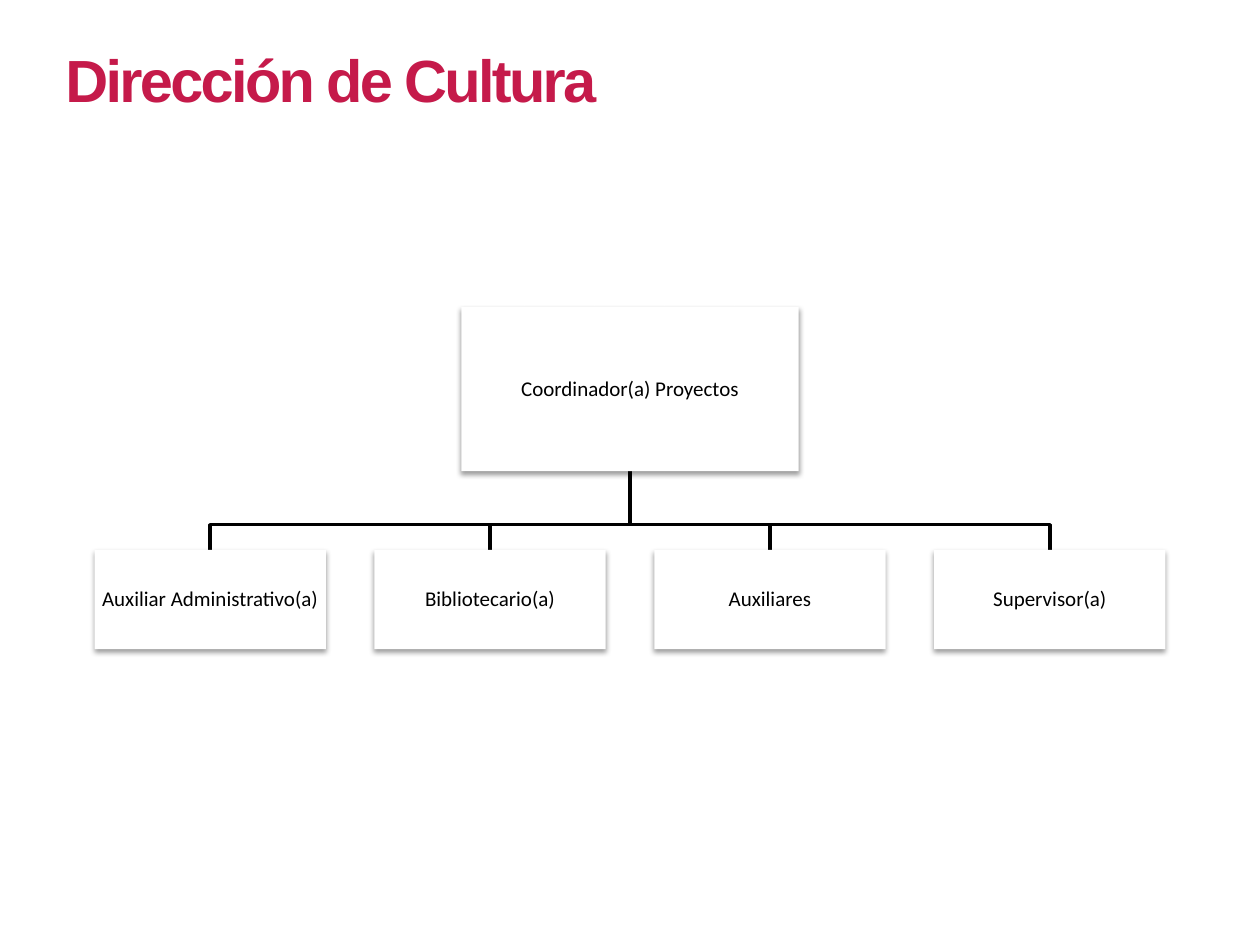
from lxml.etree import SubElement
from pptx import Presentation
from pptx.dml.color import RGBColor
from pptx.enum.shapes import MSO_SHAPE as Shape
from pptx.enum.text import MSO_ANCHOR as Anchor, MSO_AUTO_SIZE as AutoSize, PP_ALIGN as Align
from pptx.oxml.ns import qn
from pptx.util import Inches, Pt

COLORS = {"title": "C51A4A", "text": "000000", "line": "000000",
          "card": "FFFFFF", "shadow": "000000"}
WIDTH, HEIGHT = Inches(10), Inches(7.5)
LEAD = "Coordinador(a) Proyectos"
TEAM = ["Auxiliar Administrativo(a)", "Bibliotecario(a)", "Auxiliares", "Supervisor(a)"]


def color(name):
    """Return the named palette colour."""
    return RGBColor.from_string(COLORS[name])


def region(left, top, width, height):
    """Turn shares of the slide into a box of lengths."""
    return (round(left * WIDTH), round(top * HEIGHT),
            round(width * WIDTH), round(height * HEIGHT))


def write(frame, text, *, font, size, ink, bold=False, align=Align.LEFT,
          anchor=Anchor.TOP, inset=None, spacing=None, after=None, tracking=None):
    """Write one formatted paragraph into a text frame."""
    frame.word_wrap = True
    frame.vertical_anchor = anchor
    if inset is not None:
        frame.margin_left = frame.margin_right = inset
        frame.margin_top = frame.margin_bottom = inset
    paragraph = frame.paragraphs[0]
    paragraph.alignment = align
    paragraph.line_spacing = spacing
    paragraph.space_after = after
    run = paragraph.add_run()
    run.text = text
    run.font.name, run.font.size, run.font.bold = font, Pt(size), bold
    run.font.color.rgb = color(ink)
    if tracking is not None:
        run._r.get_or_add_rPr().set("spc", str(round(tracking * 100)))


def add_shadow(shape):
    """Give a shape a soft shadow straight below it."""
    shape.shadow.inherit = False
    effects = shape._element.spPr.find(qn("a:effectLst"))
    outer = SubElement(effects, qn("a:outerShdw"), blurRad=str(Pt(3.1)),
                       dist=str(Pt(1.6)), dir="5400000", rotWithShape="0")
    tint = SubElement(outer, qn("a:srgbClr"), val=COLORS["shadow"])
    SubElement(tint, qn("a:alpha"), val="38000")


def add_card(slide, box, role):
    """Place a white card that holds a role."""
    card = slide.shapes.add_shape(Shape.RECTANGLE, *box)
    card.fill.solid()
    card.fill.fore_color.rgb = color("card")
    card.line.fill.background()
    add_shadow(card)
    write(card.text_frame, role, font="Calibri", size=12, ink="text",
          align=Align.CENTER, anchor=Anchor.MIDDLE, inset=Inches(0.01),
          spacing=0.9, after=Pt(4.2))


def add_branch(slide, start, bend, end):
    """Draw a stepped line from the lead down to a team member."""
    builder = slide.shapes.build_freeform(*start)
    builder.add_line_segments([(start[0], bend), (end[0], bend), end], close=False)
    branch = builder.convert_to_shape()
    branch.fill.background()
    branch.line.color.rgb = color("line")
    branch.line.width = Pt(2)
    branch.shadow.inherit = False


def add_title(slide, box, text):
    """Place the slide title."""
    frame = slide.shapes.add_textbox(*box).text_frame
    write(frame, text, font="Arial", size=34, ink="title", bold=True, tracking=-1.5)
    frame.auto_size = AutoSize.SHAPE_TO_FIT_TEXT


def add_chart_tree(slide, box, lead, team):
    """Place the lead above an evenly spaced row of team members."""
    left, top, width, height = box
    lead_width, lead_height = round(width * 0.315), round(height * 0.48)
    card_width, card_height = round(width * 0.216), round(height * 0.29)
    pitch = (width - card_width) / (len(team) - 1)
    row_top = top + height - card_height
    center, lead_bottom = left + width // 2, top + lead_height
    bend = lead_bottom + round((row_top - lead_bottom) * 0.68)
    columns = [left + round(pitch * index) for index in range(len(team))]

    for column in reversed(columns):
        add_branch(slide, (center, lead_bottom), bend,
                   (column + card_width // 2, row_top))
    add_card(slide, (center - lead_width // 2, top, lead_width, lead_height), lead)
    for column, role in zip(columns, team):
        add_card(slide, (column, row_top, card_width, card_height), role)


def main():
    """Build and save the slide."""
    deck = Presentation()
    deck.slide_width, deck.slide_height = WIDTH, HEIGHT
    slide = deck.slides.add_slide(deck.slide_layouts[6])
    add_title(slide, region(0.042, 0.039, 0.681, 0.092), "Dirección de Cultura")
    add_chart_tree(slide, region(0.075, 0.325, 0.85, 0.362), LEAD, TEAM)
    deck.save("out.pptx")


if __name__ == "__main__":
    main()
